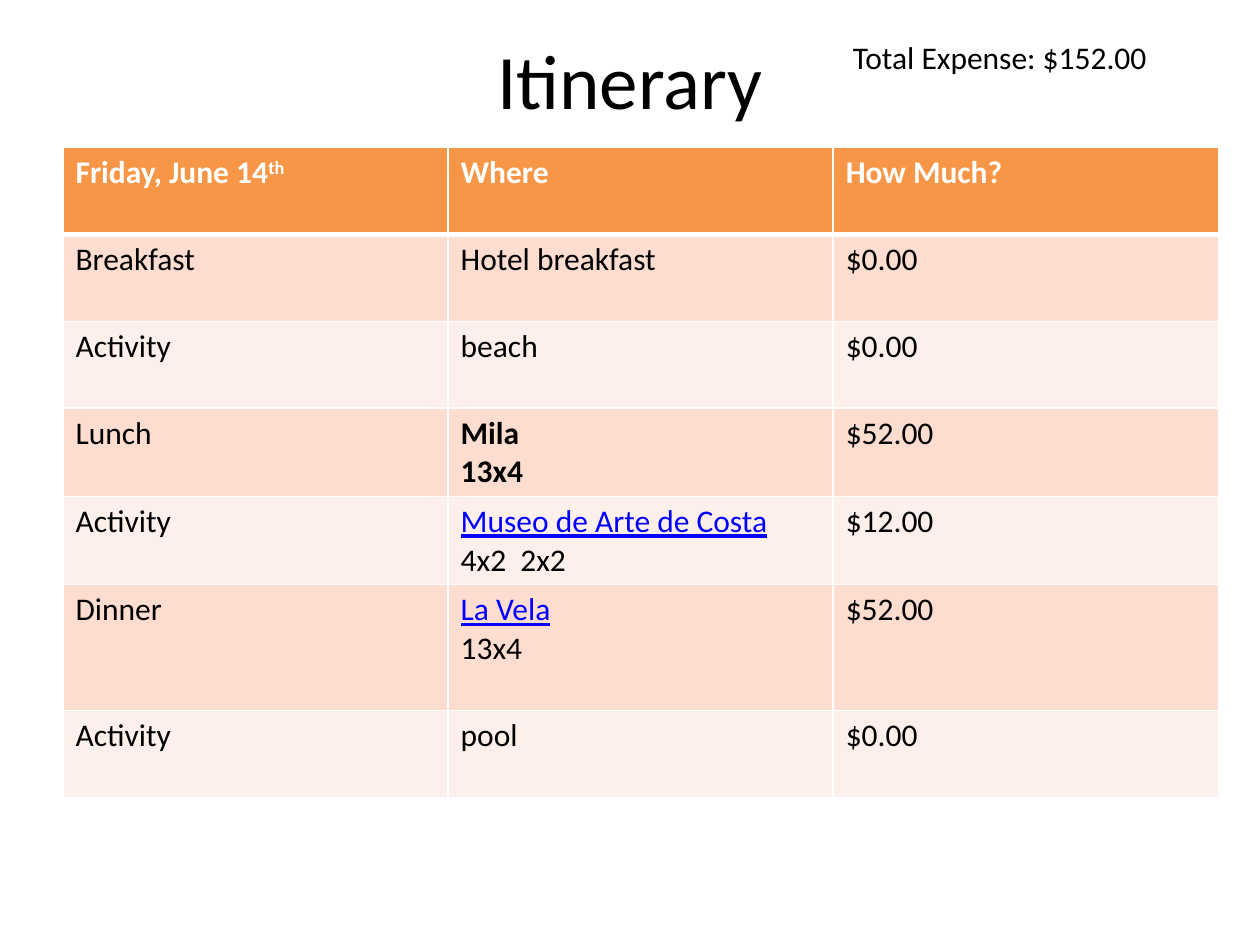
from dataclasses import dataclass

from lxml.etree import SubElement
from pptx import Presentation
from pptx.dml.color import RGBColor
from pptx.enum.text import MSO_ANCHOR, PP_ALIGN
from pptx.oxml import parse_xml
from pptx.oxml.ns import nsdecls
from pptx.util import Inches, Pt


@dataclass(frozen=True)
class Theme:
    font: str = "Calibri"
    title_size: int = 44
    body_size: int = 18
    ink: str = "000000"
    paper: str = "FFFFFF"
    link: str = "0000FF"
    header: str = "F79646"
    bands: tuple = ("FCDDCF", "FDEFE9")
    rule: int = 1
    header_rule: int = 3


class ItinerarySlide:
    def __init__(self, prs, theme):
        self.prs, self.theme = prs, theme
        self.s = prs.slides.add_slide(prs.slide_layouts[5])

    def box(self, x, y, w, h):
        """Turn shares of the slide's size into lengths."""
        width, height = self.prs.slide_width, self.prs.slide_height
        return int(x * width), int(y * height), int(w * width), int(h * height)

    def style(self, r, size=None, color=None, bold=False, underline=False):
        f = r.font
        f.name, f.size = self.theme.font, Pt(size or self.theme.body_size)
        f.color.rgb = RGBColor.from_string(color or self.theme.ink)
        f.bold, f.underline = bold, underline

    def title(self, text, *share):
        sp = self.s.shapes.title
        sp.left, sp.top, sp.width, sp.height = self.box(*share)
        tf = sp.text_frame
        tf.text, tf.vertical_anchor = text, MSO_ANCHOR.MIDDLE
        p = tf.paragraphs[0]
        p.alignment = PP_ALIGN.CENTER
        self.style(p.runs[0], self.theme.title_size)

    def note(self, text, *share):
        tf = self.s.shapes.add_textbox(*self.box(*share)).text_frame
        tf.word_wrap, tf.text = True, text
        self.style(tf.paragraphs[0].runs[0])

    def borders(self, cell, top, bottom):
        tcPr = cell._tc.get_or_add_tcPr()
        widths = {"lnL": self.theme.rule, "lnR": self.theme.rule, "lnT": top, "lnB": bottom}
        for i, (tag, width) in enumerate(widths.items()):
            ln = parse_xml(f'<a:{tag} {nsdecls("a")} w="{Pt(width)}"/>')
            fill = SubElement(ln, f"{{{ln.nsmap['a']}}}solidFill")
            SubElement(fill, f"{{{ln.nsmap['a']}}}srgbClr", val=self.theme.paper)
            tcPr.insert(i, ln)

    def cell(self, cell, lines, fill, color, bold):
        """Fill a cell; each line is plain text or a (text, mark) pair."""
        cell.fill.solid()
        cell.fill.fore_color.rgb = RGBColor.from_string(fill)
        tf = cell.text_frame
        for i, line in enumerate(lines):
            text, mark = line if isinstance(line, tuple) else (line, "")
            p = tf.add_paragraph() if i else tf.paragraphs[0]
            base, _, raised = text.partition("^")
            for part in filter(None, (base, raised)):
                r = p.add_run()
                r.text = part
                is_link = mark == "link"
                self.style(r, color=self.theme.link if is_link else color,
                           bold=bold or mark == "bold", underline=is_link)
                if part == raised:
                    r.font._element.set("baseline", "30000")

    def table(self, rows, heights, *share):
        t = self.theme
        x, y, w, h = self.box(*share)
        table = self.s.shapes.add_table(len(rows), len(rows[0]), x, y, w, h).table
        for i, (row, height) in enumerate(zip(rows, heights)):
            table.rows[i].height = Inches(height)
            head = i == 0
            fill = t.header if head else t.bands[(i - 1) % 2]
            for j, content in enumerate(row):
                cell = table.cell(i, j)
                lines = content if isinstance(content, list) else [content]
                self.cell(cell, lines, fill, t.paper if head else t.ink, head)
                self.borders(cell, t.header_rule if i == 1 else t.rule,
                             t.header_rule if head else t.rule)


# "^" starts raised text
ITINERARY = [
    ("Friday, June 14^th", "Where", "How Much?"),
    ("Breakfast", "Hotel breakfast", "$0.00"),
    ("Activity", "beach", "$0.00"),
    ("Lunch", [("Mila", "bold"), ("13x4", "bold")], "$52.00"),
    ("Activity", [("Museo de Arte de Costa", "link"), "4x2  2x2"], "$12.00"),
    ("Dinner", [("La Vela", "link"), "13x4"], "$52.00"),
    ("Activity", "pool", "$0.00"),
]
ROW_HEIGHTS = [1.0 if row[0] == "Dinner" else 0.69 for row in ITINERARY]


def main():
    prs = Presentation()
    prs.slide_width, prs.slide_height = Inches(10), Inches(7.5)
    slide = ItinerarySlide(prs, Theme())
    slide.title("Itinerary", 0.05, 0, 0.9, 1 / 6)
    slide.note("Total Expense: $152.00", 0.667, 1 / 30, 0.308, 0.054)
    slide.table(ITINERARY, ROW_HEIGHTS, 0.05, 0.156, 0.917, sum(ROW_HEIGHTS) / 7.5)
    prs.save("out.pptx")


if __name__ == "__main__":
    main()
